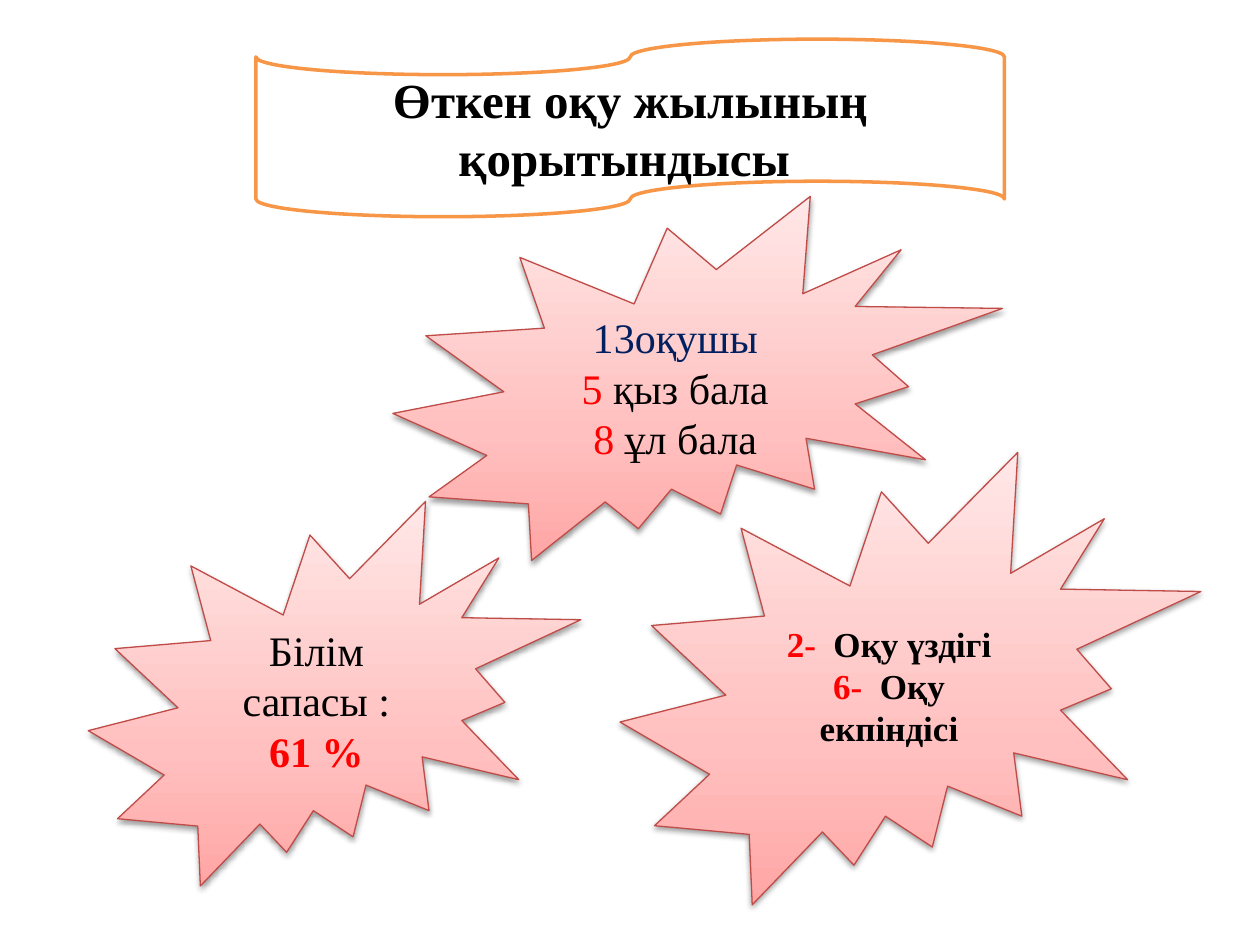
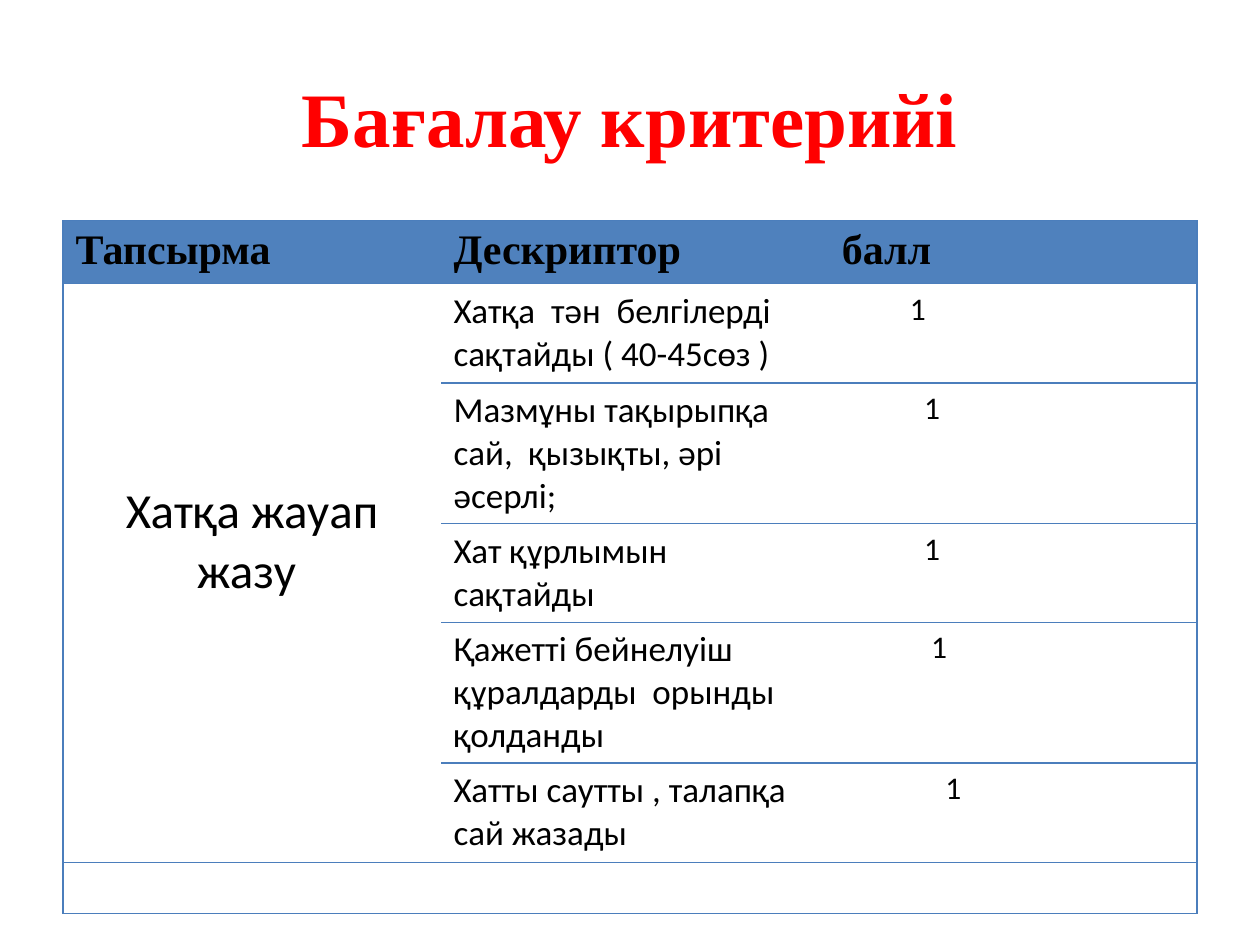
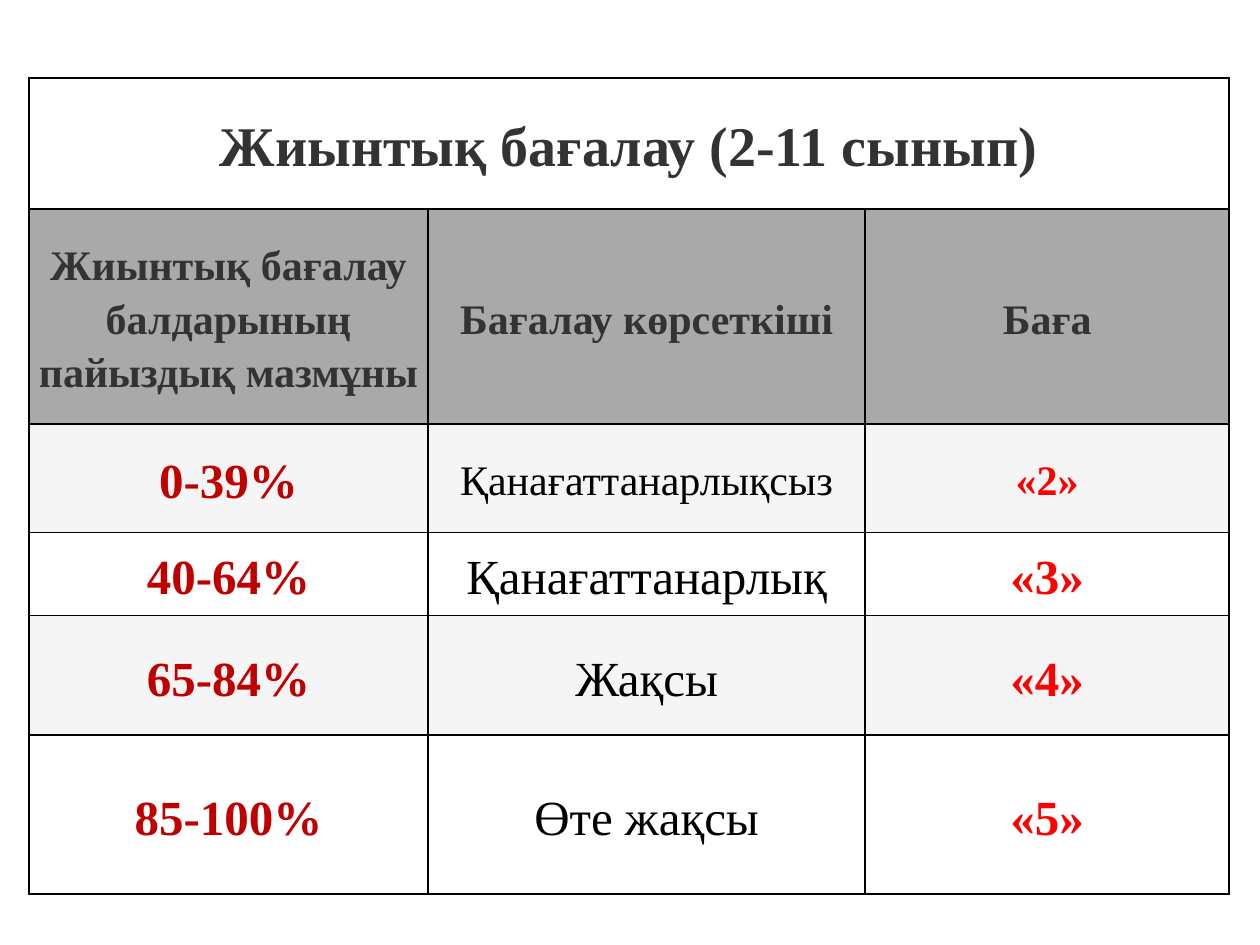
from dataclasses import dataclass

from lxml import etree
from pptx import Presentation
from pptx.dml.color import RGBColor
from pptx.enum.shapes import MSO_SHAPE
from pptx.enum.text import MSO_ANCHOR, PP_ALIGN
from pptx.oxml import parse_xml
from pptx.oxml.ns import nsdecls, qn
from pptx.slide import Slide
from pptx.table import Table, _Cell
from pptx.text.text import TextFrame
from pptx.util import Cm, Pt

TAPE = MSO_SHAPE.FLOWCHART_PUNCHED_TAPE
SEAL = MSO_SHAPE.EXPLOSION2
MIDDLE = MSO_ANCHOR.MIDDLE
LEFT = PP_ALIGN.LEFT
CENTER = PP_ALIGN.CENTER

WHITE = RGBColor(0xFF, 0xFF, 0xFF)
BLACK = RGBColor(0x00, 0x00, 0x00)
RED = RGBColor(0xFF, 0x00, 0x00)
DARK_RED = RGBColor(0xC0, 0x00, 0x00)
NAVY = RGBColor(0x00, 0x20, 0x60)
ORANGE = RGBColor(0xF7, 0x96, 0x46)
SEAL_LINE = RGBColor(0xBF, 0x4C, 0x48)
SEAL_BOTTOM = RGBColor(0xFF, 0xA6, 0xA5)
SEAL_MIDDLE = RGBColor(0xFF, 0xC0, 0xBF)
SEAL_TOP = RGBColor(0xFF, 0xE7, 0xE7)
HEADER_BLUE = RGBColor(0x4F, 0x81, 0xBD)
BORDER_BLUE = RGBColor(0x4B, 0x7E, 0xBC)
HEADER_GREY = RGBColor(0xA9, 0xA9, 0xA9)
BAND_GREY = RGBColor(0xF5, 0xF5, 0xF5)
DARK_GREY = RGBColor(0x33, 0x33, 0x33)

SERIF = "Times New Roman"
SANS = "Calibri"
SIDES = ("L", "R", "T", "B")
CELL_INSET = 0.25


@dataclass(frozen=True)
class Box:
    left: float
    top: float
    width: float
    height: float

    def lengths(self) -> tuple[Cm, Cm, Cm, Cm]:
        return Cm(self.left), Cm(self.top), Cm(self.width), Cm(self.height)


@dataclass(frozen=True)
class Span:
    text: str
    color: RGBColor = BLACK
    bold: bool = False


Lines = list[list[Span]]


@dataclass(frozen=True)
class Seal:
    box: Box
    size: int
    lines: Lines
    bottom_inset: float = 0.13


@dataclass(frozen=True)
class Criterion:
    descriptor: str
    indent: float
    height: float


@dataclass(frozen=True)
class Grade:
    percent: str
    label: str
    mark: str
    height: float
    fill: RGBColor
    label_size: int = 28


SEALS = [
    Seal(Box(1.78, 10.11, 9.93, 7.75), 24,
         [[Span("Білім сапасы : "), Span("61 %", RED, True)]]),
    Seal(Box(12.5, 9.12, 11.71, 9.12), 20,
         [[Span("2- ", RED, True), Span(" Оқу үздігі", bold=True)],
          [Span("6-", RED, True), Span("  Оқу екпіндісі", bold=True)]]),
    Seal(Box(7.92, 3.96, 12.29, 7.34), 24,
         [[Span("13оқушы", NAVY)],
          [Span("5 ", RED), Span("қыз бала")],
          [Span("8", RED), Span(" ұл бала")]], bottom_inset=0),
]

CRITERIA = [
    Criterion("Хатқа  тән  белгілерді  сақтайды ( 40-45сөз )", 1.58, 2),
    Criterion("Мазмұны тақырыпқа сай,  қызықты, әрі әсерлі;", 1.87, 2.84),
    Criterion("Хат құрлымын  сақтайды", 1.87, 1.98),
    Criterion("Қажетті бейнелуіш  құралдарды  орынды қолданды", 2.01, 2.84),
    Criterion("Хатты саутты , талапқа сай жазады", 2.3, 2),
]

GRADES = [
    Grade("0-39%", "Қанағаттанарлықсыз", "«2»", 2.18, BAND_GREY, 24),
    Grade("40-64%", "Қанағаттанарлық", "«3»", 1.68, WHITE),
    Grade("65-84%", "Жақсы", "«4»", 2.41, BAND_GREY),
    Grade("85-100%", "Өте жақсы", "«5»", 3.2, WHITE),
]


def write_text(frame: TextFrame, lines: Lines, *, size: int, font: str = SERIF,
               align: PP_ALIGN = CENTER, spacing: float = 1.0) -> None:
    frame.word_wrap = True
    for index, spans in enumerate(lines):
        para = frame.add_paragraph() if index else frame.paragraphs[0]
        para.alignment = align
        para.line_spacing = spacing
        for span in spans:
            run = para.add_run()
            run.text = span.text
            run.font.name = font
            run.font.size = Pt(size)
            run.font.bold = span.bold
            run.font.color.rgb = span.color


def add_tape(page: Slide, box: Box, title: str) -> None:
    tape = page.shapes.add_shape(TAPE, *box.lengths())
    tape.shadow.inherit = False
    tape.fill.solid()
    tape.fill.fore_color.rgb = WHITE
    tape.line.color.rgb = ORANGE
    tape.line.width = Pt(2)
    tape.text_frame.vertical_anchor = MIDDLE
    write_text(tape.text_frame, [[Span(title, bold=True)]], size=28)


def add_seal(page: Slide, seal: Seal) -> None:
    shape = page.shapes.add_shape(SEAL, *seal.box.lengths())
    shape.fill.gradient()
    shape.fill.gradient_angle = 90
    properties = shape._element.spPr
    stops = properties.find(".//" + qn("a:gsLst"))
    for stop in list(stops):
        stops.remove(stop)
    for percent, color in ((0, SEAL_BOTTOM), (35, SEAL_MIDDLE), (100, SEAL_TOP)):
        stops.append(parse_xml(
            f'<a:gs {nsdecls("a")} pos="{percent * 1000}"><a:srgbClr val="{color}"/></a:gs>'))
    shape.line.color.rgb = SEAL_LINE
    shape.line.width = Pt(0.75)
    shape.shadow.inherit = False
    properties.find(qn("a:effectLst")).append(parse_xml(
        f'<a:outerShdw {nsdecls("a")} blurRad="{Pt(3.1)}" dist="{Pt(1.6)}" dir="5400000" '
        'rotWithShape="0"><a:srgbClr val="000000"><a:alpha val="38000"/></a:srgbClr>'
        '</a:outerShdw>'))
    frame = shape.text_frame
    frame.vertical_anchor = MIDDLE
    frame.margin_bottom = Cm(seal.bottom_inset)
    write_text(frame, seal.lines, size=seal.size)


def add_grid(page: Slide, left: float, top: float, widths: list[float],
             heights: list[float]) -> Table:
    box = Box(left, top, sum(widths), sum(heights))
    grid = page.shapes.add_table(len(heights), len(widths), *box.lengths()).table
    grid.first_row = False
    grid.horz_banding = False
    for column, width in zip(grid.columns, widths):
        column.width = Cm(width)
    for row, height in zip(grid.rows, heights):
        row.height = Cm(height)
    return grid


def fill_cell(cell: _Cell, color: RGBColor) -> None:
    cell.fill.solid()
    cell.fill.fore_color.rgb = color


def set_borders(cell: _Cell, sides: str, color: RGBColor, width: float) -> None:
    properties = cell._tc.get_or_add_tcPr()
    for index, side in enumerate(SIDES):
        line = etree.Element(qn(f"a:ln{side}"), w=str(Pt(width)))
        if side in sides:
            paint = etree.SubElement(line, qn("a:solidFill"))
            etree.SubElement(paint, qn("a:srgbClr"), val=str(color))
        else:
            etree.SubElement(line, qn("a:noFill"))
        properties.insert(index, line)


def build_results(page: Slide) -> None:
    add_tape(page, Box(5.16, 0.79, 15.09, 3.58), "Өткен оқу жылының қорытындысы ")
    for seal in SEALS:
        add_seal(page, seal)


def build_criteria(page: Slide) -> None:
    title = page.shapes.add_textbox(*Box(1.27, 0.76, 22.86, 3.18).lengths())
    title.text_frame.vertical_anchor = MIDDLE
    write_text(title.text_frame, [[Span("Бағалау критерийі", RED, True)]], size=44)

    heights = [1.19, *(criterion.height for criterion in CRITERIA), 1.04]
    grid = add_grid(page, 1.27, 4.45, [7.62] * 3, heights)
    last_column = len(grid.columns) - 1
    task = grid.cell(1, 0)
    task.merge(grid.cell(len(CRITERIA), 0))
    for row in range(len(heights)):
        for column in range(last_column + 1):
            cell = grid.cell(row, column)
            cell.fill.background()
            sides = "" if cell.is_spanned else "TB"
            if column == 0:
                sides += "L"
            if column == last_column:
                sides += "R"
            set_borders(cell, sides, BORDER_BLUE, 0.75)

    for column, heading in enumerate(("Тапсырма", "Дескриптор", "балл")):
        cell = grid.cell(0, column)
        fill_cell(cell, HEADER_BLUE)
        write_text(cell.text_frame, [[Span(heading, bold=True)]], size=24, align=LEFT)
    grid.cell(0, last_column).margin_left = Cm(CELL_INSET + 0.21)

    task.margin_top = Cm(4)
    write_text(task.text_frame, [[Span("Хатқа жауап жазу ")]], size=28, font=SANS)
    for row, criterion in enumerate(CRITERIA, start=1):
        write_text(grid.cell(row, 1).text_frame, [[Span(criterion.descriptor)]],
                   size=20, font=SANS, align=LEFT)
        score = grid.cell(row, last_column)
        score.margin_left = Cm(CELL_INSET + criterion.indent)
        write_text(score.text_frame, [[Span("1")]], size=18, font=SANS, align=LEFT)


def write_grade_cell(cell: _Cell, span: Span, size: int, fill: RGBColor) -> None:
    fill_cell(cell, fill)
    cell.vertical_anchor = MIDDLE
    cell.margin_left = cell.margin_right = cell.margin_top = cell.margin_bottom = 0
    write_text(cell.text_frame, [[span]], size=size, spacing=1.15)


def build_grades(page: Slide) -> None:
    heights = [2.64, 4.34, *(grade.height for grade in GRADES)]
    grid = add_grid(page, 0.58, 1.57, [8.05, 8.81, 7.34], heights)
    grid.cell(0, 0).merge(grid.cell(0, 2))
    for cell in grid.iter_cells():
        set_borders(cell, "LRTB", BLACK, 1)
    write_grade_cell(grid.cell(0, 0), Span("Жиынтық бағалау (2-11 сынып)", DARK_GREY, True),
                     32, WHITE)
    headings = ("Жиынтық бағалау балдарының пайыздық мазмұны", "Бағалау көрсеткіші", "Баға")
    for column, heading in enumerate(headings):
        write_grade_cell(grid.cell(1, column), Span(heading, DARK_GREY, True), 24, HEADER_GREY)
    for row, grade in enumerate(GRADES, start=2):
        write_grade_cell(grid.cell(row, 0), Span(grade.percent, DARK_RED, True), 28, grade.fill)
        write_grade_cell(grid.cell(row, 1), Span(grade.label), grade.label_size, grade.fill)
        write_grade_cell(grid.cell(row, 2), Span(grade.mark, RED, True),
                         grade.label_size, grade.fill)


def main() -> None:
    deck = Presentation()
    deck.slide_width = Cm(25.4)
    deck.slide_height = Cm(19.05)
    blank = deck.slide_layouts[6]
    for build in (build_results, build_criteria, build_grades):
        build(deck.slides.add_slide(blank))
    deck.save("out.pptx")


if __name__ == "__main__":
    main()
